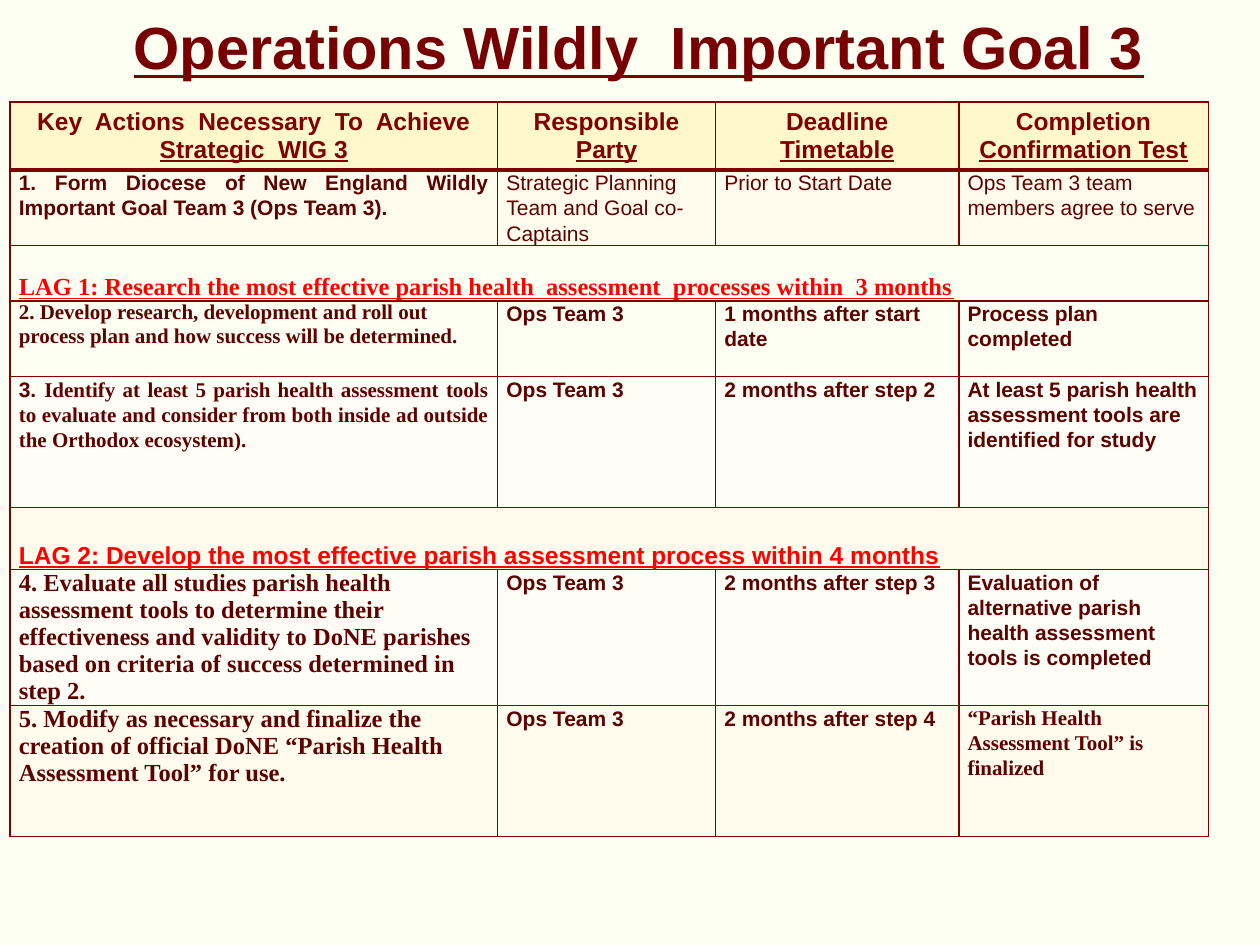
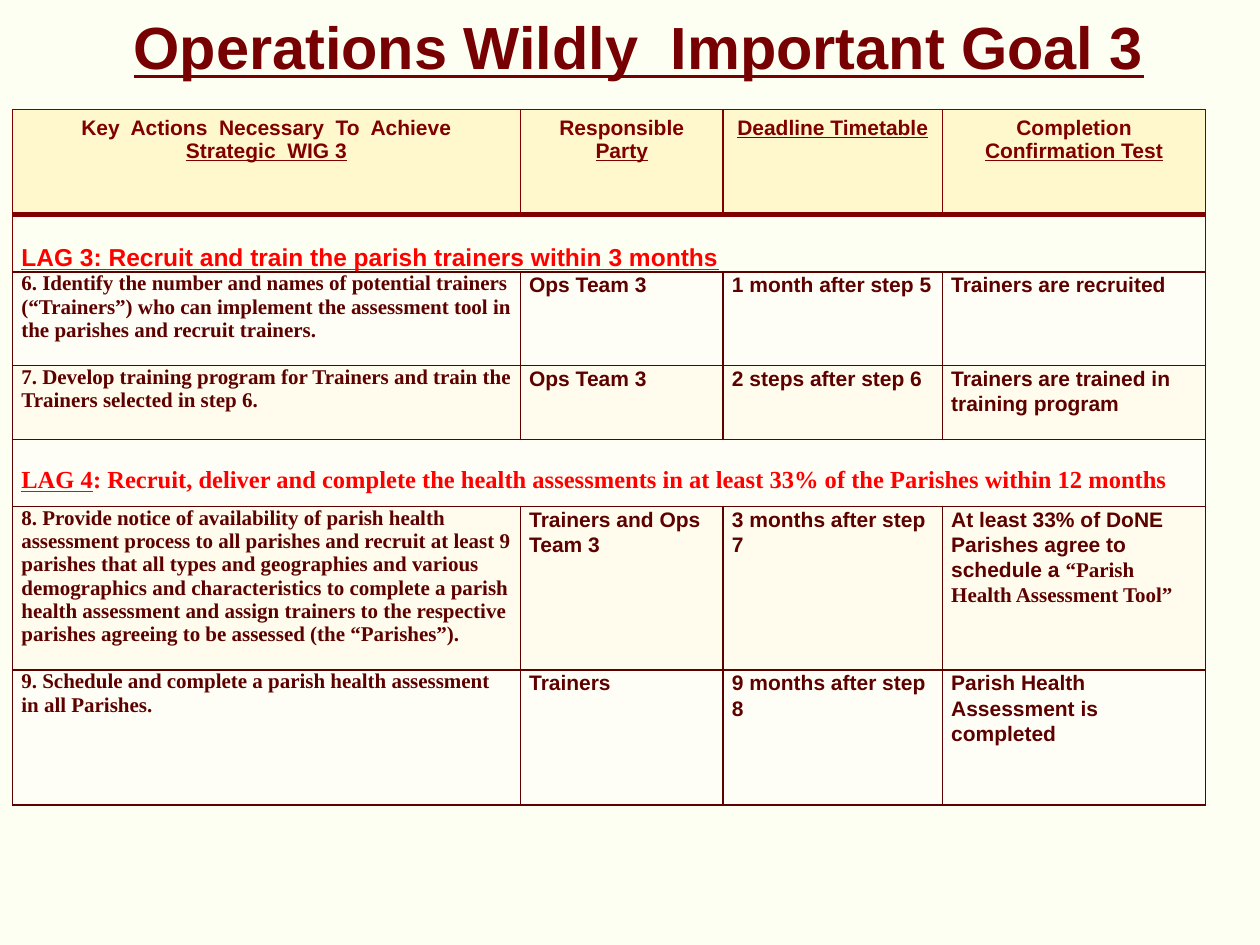
from lxml import etree
from pptx import Presentation
from pptx.dml.color import RGBColor
from pptx.enum.text import MSO_ANCHOR, PP_ALIGN
from pptx.oxml.ns import qn
from pptx.util import Inches, Pt

LEFT, MID, JUST = PP_ALIGN.LEFT, PP_ALIGN.CENTER, PP_ALIGN.JUSTIFY
TOP, CORE, LOW = MSO_ANCHOR.TOP, MSO_ANCHOR.MIDDLE, MSO_ANCHOR.BOTTOM

SANS, SERIF = "Arial", "Times New Roman"
PAGE, WINE, DARK, RED = "FEFFF3", "800000", "5D0100", "FF0000"
GOLD, CREAM, PALE, NONE = "FFF8CD", "FFFCED", "FFFEF6", None

TITLE = "Operations Wildly  Important Goal 3"
TEAM = "Ops Team 3"

# style: font, size, colour, bold, underline
STYLES = {
    "title": (SANS, 34, "760002", True, True),
    "plain": (SANS, 12, DARK, False, False),
    "sans": (SANS, 12, DARK, True, False),
    "serif": (SERIF, 12, DARK, True, False),
    "large": (SERIF, 14, DARK, True, False),
    "lag": (SANS, 14, RED, True, True),
    "lagser": (SERIF, 14, RED, True, True),
    "lagflat": (SERIF, 14, RED, True, False),
}
for size in (12, 14):
    STYLES[f"head{size}"] = (SANS, size, WINE, True, False)
    STYLES[f"under{size}"] = (SANS, size, WINE, True, True)

ACTS = ["Key  Actions  Necessary  To  Achieve", "Strategic  WIG 3"]
PARTY = ["Responsible", "Party"]
TEST = ["Completion", "Confirmation Test"]

SLIDES = [
    {
        "at": (0.08, 0.81), "cols": (3.87, 1.73, 1.93, 1.98),
        "size": 14, "tall": 0.54, "line": WINE,
        "heads": [ACTS, PARTY, ["Deadline", "Timetable"], TEST],
        "rows": [
            (0.6, CREAM, JUST, [
                [("1. Form Diocese of New England Wildly Important Goal Team 3 (Ops Team 3).", "sans")],
                [("Strategic Planning Team and Goal co-Captains", "plain")],
                [("Prior to Start Date", "plain")],
                [("Ops Team 3 team members agree to serve", "plain")]]),
            (0.44, NONE, LEFT, [
                [("LAG 1: Research the most effective parish health  assessment  processes within  3 months", "lagser")]]),
            (0.6, NONE, LEFT, [
                [("2. Develop research, development and roll out process plan and how success will be determined.", "serif")],
                [(TEAM, "sans")],
                [("1 months after start date", "sans")],
                [("Process plan completed", "sans")]]),
            (1.04, PALE, JUST, [
                [("3. ", "sans"),
                 ("Identify at least 5 parish health assessment tools to evaluate and consider from both inside ad outside the Orthodox ecosystem).", "serif")],
                [(TEAM, "sans")],
                [("2 months after step 2", "sans")],
                [("At least 5 parish health assessment tools are identified for study", "sans")]]),
            (0.49, CREAM, LEFT, [
                [("LAG 2: Develop the most effective parish assessment process within 4 months", "lag")]]),
            (1.08, PALE, LEFT, [
                [("4. Evaluate all studies parish health assessment tools to determine their effectiveness and validity to DoNE parishes based on criteria of success determined in step 2.", "large")],
                [(TEAM, "sans")],
                [("2 months after step 3", "sans")],
                [("Evaluation of alternative parish health assessment tools is completed", "sans")]]),
            (1.04, CREAM, LEFT, [
                [("5. Modify as necessary and finalize the creation of official DoNE “Parish Health Assessment Tool” for use.", "large")],
                [(TEAM, "sans")],
                [("2 months after step 4", "sans")],
                [("“Parish Health Assessment Tool” is finalized", "serif")]]),
        ],
    },
    {
        "at": (0.1, 0.87), "cols": (4.03, 1.61, 1.74, 2.09),
        "size": 12, "tall": 0.83, "line": DARK,
        "heads": [ACTS, PARTY, ["Deadline Timetable"], TEST],
        "rows": [
            (0.46, NONE, LEFT, [
                [("LAG 3: Recruit and train the parish trainers within 3 months", "lag")]]),
            (0.74, PALE, LEFT, [
                [("6. Identify the number and names of potential trainers (“Trainers”) who can implement the assessment tool in the parishes and recruit trainers.", "serif")],
                [(TEAM, "sans")],
                [("1 month after step 5", "sans")],
                [("Trainers are recruited", "sans")]]),
            (0.59, CREAM, LEFT, [
                [("7. Develop training program for Trainers and train the Trainers selected in step 6.", "serif")],
                [(TEAM, "sans")],
                [("2 steps after step 6", "sans")],
                [("Trainers are trained in training program", "sans")]]),
            (0.53, PALE, LEFT, [
                [("LAG 4", "lagser"),
                 (": Recruit, deliver and complete the health assessments in at least 33% of the Parishes within 12 months", "lagflat")]]),
            (1.3, CREAM, LEFT, [
                [("8. Provide notice of availability of parish health assessment process to all parishes and recruit at least 9 parishes that all types and geographies and various demographics and characteristics to complete a parish health assessment and assign trainers to the respective parishes agreeing to be assessed (the “Parishes”).", "serif")],
                [("Trainers and Ops Team 3", "sans")],
                [("3 months after step 7", "sans")],
                [("At least 33% of DoNE Parishes agree to schedule a ", "sans"),
                 ("“Parish Health Assessment Tool”", "serif")]]),
            (1.07, PALE, LEFT, [
                [("9. Schedule and complete a parish health assessment in all Parishes.", "serif")],
                [("Trainers", "sans")],
                [("9 months after step 8", "sans")],
                [("Parish Health Assessment is completed", "sans")]]),
        ],
    },
]


def paint(fill, hue):
    if hue is None:
        fill.background()
    else:
        fill.solid()
        fill.fore_color.rgb = RGBColor.from_string(hue)


def write(para, runs, align, space):
    para.alignment = align
    para.line_spacing = space
    for text, style in runs:
        run = para.add_run()
        run.text = text
        font = run.font
        font.name, size, hue, font.bold, font.underline = STYLES[style]
        font.size = Pt(size)
        font.color.rgb = RGBColor.from_string(hue)


def edge(cell, hue, top, low):
    props = cell._tc.get_or_add_tcPr()
    for side, wide in zip("LRTB", (1, 1, top, low)):
        line = etree.SubElement(props, qn(f"a:ln{side}"), w=str(Pt(wide)))
        solid = etree.SubElement(line, qn("a:solidFill"))
        etree.SubElement(solid, qn("a:srgbClr"), val=hue)


def inset(cell, side, top, low):
    cell.margin_left = cell.margin_right = Inches(side)
    cell.margin_top, cell.margin_bottom = Inches(top), Inches(low)


def add_title(slide):
    box = slide.shapes.add_textbox(Inches(0.84), Inches(-0.19), Inches(8.46), Inches(1.25))
    frame = box.text_frame
    frame.word_wrap = True
    frame.vertical_anchor = CORE
    write(frame.paragraphs[0], [(TITLE, "title")], MID, 0.7)


def add_head(table, data):
    size = data["size"]
    for col, words in enumerate(data["heads"]):
        cell = table.cell(0, col)
        edge(cell, WINE, 1, 3)
        paint(cell.fill, GOLD)
        inset(cell, 0.1, 0.05, 0.05)
        frame = cell.text_frame
        for i, text in enumerate(words):
            para = frame.add_paragraph() if i else frame.paragraphs[0]
            kind = "under" if i == len(words) - 1 else "head"
            write(para, [(text, f"{kind}{size}")], MID, 1.0)


def add_row(table, num, row, hue):
    _, fill, align, cells = row
    for col in range(len(table.columns)):
        cell = table.cell(num, col)
        edge(cell, WINE if num == 1 else hue, 3 if num == 1 else 1, 1)
        paint(cell.fill, fill)
        inset(cell, 0.07, 0, 0)
    lag = len(cells) == 1
    if lag:
        table.cell(num, 0).merge(table.cell(num, len(table.columns) - 1))
    for col, runs in enumerate(cells):
        cell = table.cell(num, col)
        cell.vertical_anchor = LOW if lag else TOP
        flat = runs[-1][1] == "lagflat"
        if flat:
            cell.margin_bottom = Inches(0.1)
        tight = flat or (col == 0 and not lag and align == LEFT)
        write(cell.text_frame.paragraphs[0], runs,
              LEFT if col else align, 1.0 if tight else 1.07)


def add_grid(slide, data):
    cols, rows = data["cols"], data["rows"]
    highs = [data["tall"]] + [row[0] for row in rows]
    left, top = data["at"]
    table = slide.shapes.add_table(
        len(highs), len(cols), Inches(left), Inches(top),
        Inches(sum(cols)), Inches(sum(highs))).table
    table.first_row = table.horz_banding = False
    for col, wide in zip(table.columns, cols):
        col.width = Inches(wide)
    for row, high in zip(table.rows, highs):
        row.height = Inches(high)
    add_head(table, data)
    for num, row in enumerate(rows, 1):
        add_row(table, num, row, data["line"])


def main():
    deck = Presentation()
    deck.slide_width, deck.slide_height = Inches(10), Inches(7.5)
    for data in SLIDES:
        slide = deck.slides.add_slide(deck.slide_layouts[6])
        paint(slide.background.fill, PAGE)
        add_grid(slide, data)
        add_title(slide)
    deck.save("out.pptx")


if __name__ == "__main__":
    main()
